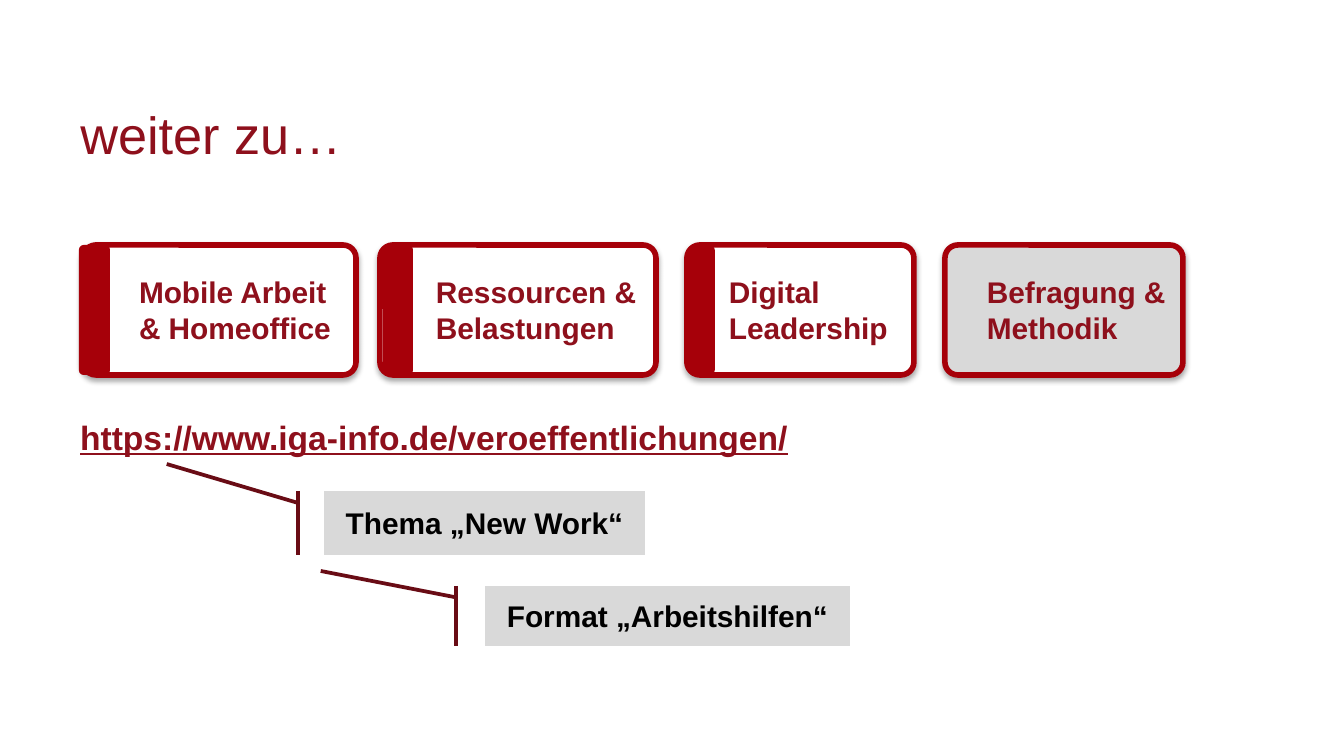
from lxml import etree
from pptx import Presentation
from pptx import util as u
from pptx.dml import color
from pptx.enum import shapes, text
from pptx.oxml import ns

SCALE = 914400 / 134.4
RED, WINE, DARK, GREY = "A60009", "8E101C", "690C15", "D9D9D9"


def px(*vals):
    return [u.Emu(round(v * SCALE)) for v in vals]


def write(shape, words, size=16, hue=WINE, bold=True, line=False,
          align=text.PP_ALIGN.LEFT, indent=0, space=1.0):
    frame = shape.text_frame
    frame.word_wrap = True
    frame.auto_size = text.MSO_AUTO_SIZE.NONE
    frame.vertical_anchor = text.MSO_ANCHOR.MIDDLE
    frame.text = words
    par = frame.paragraphs[0]
    par.alignment = align
    par.line_spacing = space
    if indent:
        par._p.get_or_add_pPr().set("marL", str(px(indent)[0]))
    for run in par.runs:
        font = run.font
        font.name, font.size = "Arial", u.Pt(size)
        font.bold, font.underline = bold, line
        font.color.rgb = color.RGBColor.from_string(hue)


deck = Presentation()
deck.slide_width, deck.slide_height = px(1344, 756)
slide = deck.slides.add_slide(deck.slide_layouts[5])

title = slide.shapes.title
title.left, title.top, title.width, title.height = px(67, 90, 898, 95)
write(title, "weiter zu…", size=28, bold=False, space=0.9)

TOP, HIGH = 245, 130
cards = [
    ("Mobile Arbeit\v& Homeoffice", 83, 273, 39, (79, 31, 0.15)),
    ("Ressourcen & Belastungen", 380, 276, 39, (383, 30, 0.16)),
    ("Digital Leadership", 687, 227, 25, (688, 27, 0.2)),
    ("Befragung & Methodik", 945, 238, 25, None),
]
for words, left, wide, indent, bar in cards:
    home = slide.shapes.add_group_shape().shapes if bar else slide.shapes
    card = home.add_shape(shapes.MSO_SHAPE.ROUNDED_RECTANGLE,
                          *px(left, TOP, wide, HIGH))
    card.adjustments[0] = 0.1
    card.fill.solid()
    card.fill.fore_color.rgb = color.RGBColor.from_string("FFFFFF" if bar else GREY)
    card.line.color.rgb = color.RGBColor.from_string(RED)
    card.line.width = u.Pt(3)
    card.shadow.inherit = False
    glow = card._element.spPr.find(ns.qn("a:effectLst"))
    shade = etree.SubElement(glow, ns.qn("a:outerShdw"), blurRad=str(u.Pt(3.1)),
                             dist=str(u.Pt(1.8)), dir="5400000", rotWithShape="0")
    tint = etree.SubElement(shade, ns.qn("a:srgbClr"), val="000000")
    etree.SubElement(tint, ns.qn("a:alpha"), val="35000")
    write(card, words, indent=indent)
    if bar:
        start, thick, curve = bar
        strip = home.add_shape(shapes.MSO_SHAPE.ROUNDED_RECTANGLE,
                               *px(start, TOP, thick, HIGH))
        strip.adjustments[0] = curve
        strip.fill.solid()
        strip.fill.fore_color.rgb = color.RGBColor.from_string(RED)
        strip.line.fill.background()
        strip.shadow.inherit = False

link = slide.shapes.add_textbox(*px(67, 410, 1126, 54))
write(link, "https://www.iga-info.de/veroeffentlichungen/", size=18, line=True)

notes = [
    ("Thema „New Work“", (324, 491, 321, 64), (-0.42, -0.49)),
    ("Format „Arbeitshilfen“", (485, 586, 365, 60), (-0.25, -0.45)),
]
for words, area, tip in notes:
    note = slide.shapes.add_shape(shapes.MSO_SHAPE.LINE_CALLOUT_1_ACCENT_BAR, *px(*area))
    for spot, value in enumerate((0.19, -0.08, *tip)):
        note.adjustments[spot] = value
    note.fill.solid()
    note.fill.fore_color.rgb = color.RGBColor.from_string(GREY)
    note.line.color.rgb = color.RGBColor.from_string(DARK)
    note.line.width = u.Pt(2)
    note.shadow.inherit = False
    write(note, words, hue="000000", align=text.PP_ALIGN.CENTER)

deck.save("out.pptx")
